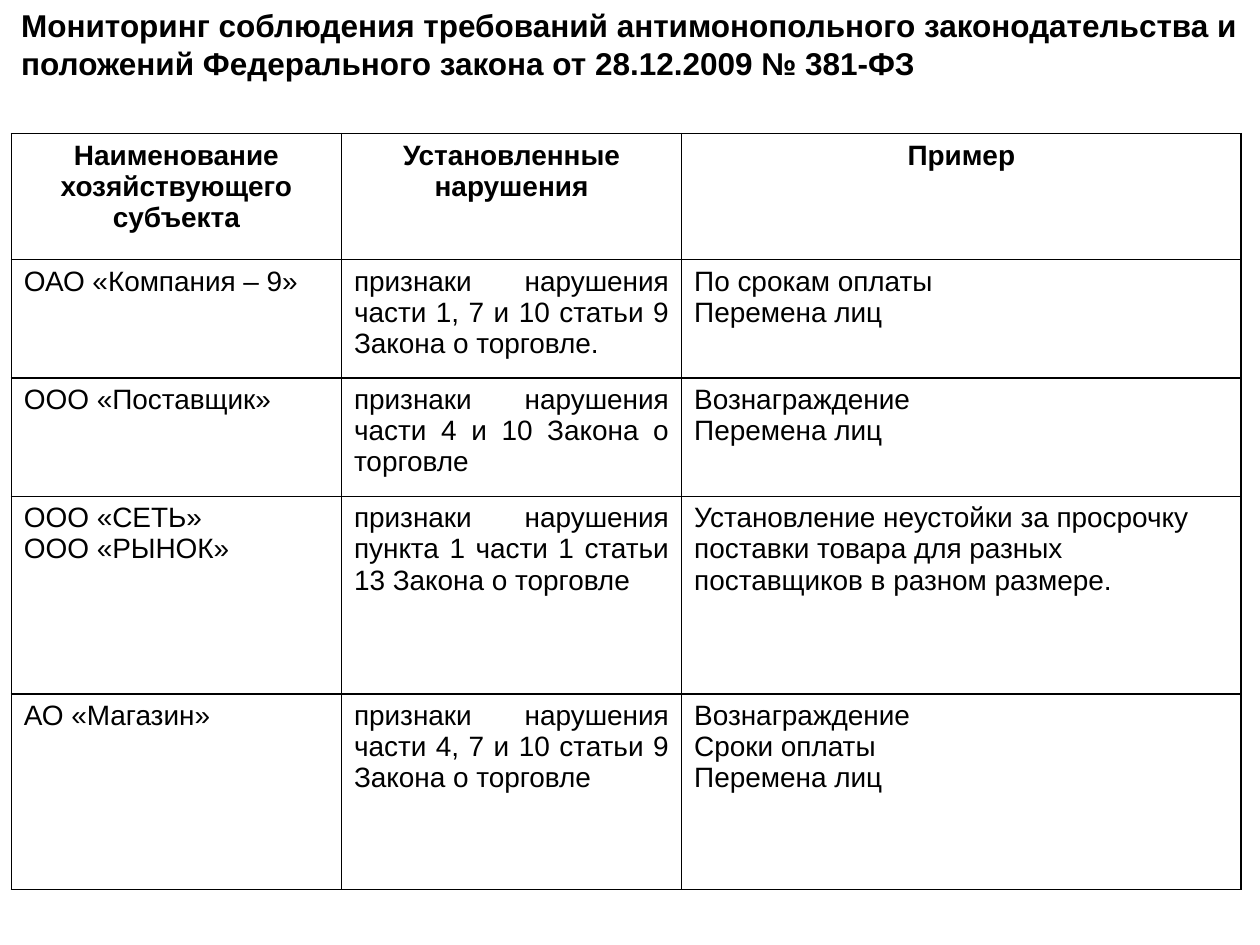
from pptx import Presentation
from pptx.dml.color import RGBColor
from pptx.enum.text import PP_ALIGN
from pptx.oxml import parse_xml
from pptx.oxml.ns import nsdecls
from pptx.util import Inches, Pt

BLACK = "000000"
TITLE = ("Мониторинг соблюдения требований антимонопольного законодательства "
         "и положений Федерального закона от 28.12.2009 № 381-ФЗ")
COLS = [2.62, 2.7, 4.44]
HEIGHTS = [1, 0.94, 0.94, 1.57, 1.55]
ROWS = [
    ["Наименование хозяйствующего субъекта", "Установленные нарушения", "Пример"],
    ["ОАО «Компания – 9»",
     "признаки нарушения части 1, 7 и 10 статьи 9 Закона о торговле.",
     "По срокам оплаты\nПеремена лиц"],
    ["ООО «Поставщик»",
     "признаки нарушения части 4 и 10 Закона о торговле",
     "Вознаграждение\nПеремена лиц"],
    ["ООО «СЕТЬ»\nООО «РЫНОК»",
     "признаки нарушения пункта 1 части 1 статьи 13 Закона о торговле",
     "Установление неустойки за просрочку поставки товара для разных "
     "поставщиков в разном размере."],
    ["АО «Магазин»",
     "признаки нарушения части 4, 7 и 10 статьи 9 Закона о торговле",
     "Вознаграждение\nСроки оплаты\nПеремена лиц"],
]


def color(code):
    return RGBColor.from_string(code)


def style(frame, size, bold, align):
    for para in frame.paragraphs:
        para.alignment = align
        for run in para.runs:
            run.font.name = "Arial"
            run.font.size = Pt(size)
            run.font.bold = bold
            run.font.color.rgb = color(BLACK)


def border(cell):
    props = cell._tc.get_or_add_tcPr()
    for i, side in enumerate(("lnL", "lnR", "lnT", "lnB")):
        props.insert(i, parse_xml(
            f'<a:{side} {nsdecls("a")} w="{Pt(1)}"><a:solidFill>'
            f'<a:srgbClr val="{BLACK}"/></a:solidFill></a:{side}>'))


def add_title(slide, left, top, width, height):
    box = slide.shapes.add_textbox(
        Inches(left), Inches(top), Inches(width), Inches(height))
    frame = box.text_frame
    frame.word_wrap = True
    frame.text = TITLE
    style(frame, 18, True, PP_ALIGN.LEFT)


def add_grid(slide, left, top, width, height):
    table = slide.shapes.add_table(
        len(ROWS), len(COLS), Inches(left), Inches(top),
        Inches(width), Inches(height)).table
    table.horz_banding = False
    for col, size in zip(table.columns, COLS):
        col.width = Inches(size)
    for row, size in zip(table.rows, HEIGHTS):
        row.height = Inches(size)
    for r, texts in enumerate(ROWS):
        for c, text in enumerate(texts):
            cell = table.cell(r, c)
            cell.fill.background()
            border(cell)
            cell.text_frame.text = text
            if r == 0:
                align = PP_ALIGN.CENTER
            elif (r, c) == (3, 2):
                align = PP_ALIGN.LEFT
            else:
                align = PP_ALIGN.JUSTIFY
            style(cell.text_frame, 16, r == 0, align)


def main():
    deck = Presentation()
    deck.slide_width, deck.slide_height = Inches(10), Inches(7.5)
    slide = deck.slides.add_slide(deck.slide_layouts[6])
    add_grid(slide, 0.09, 1.06, sum(COLS), sum(HEIGHTS))
    add_title(slide, 0.07, 0, 9.85, 0.94)
    deck.save("out.pptx")


if __name__ == "__main__":
    main()
